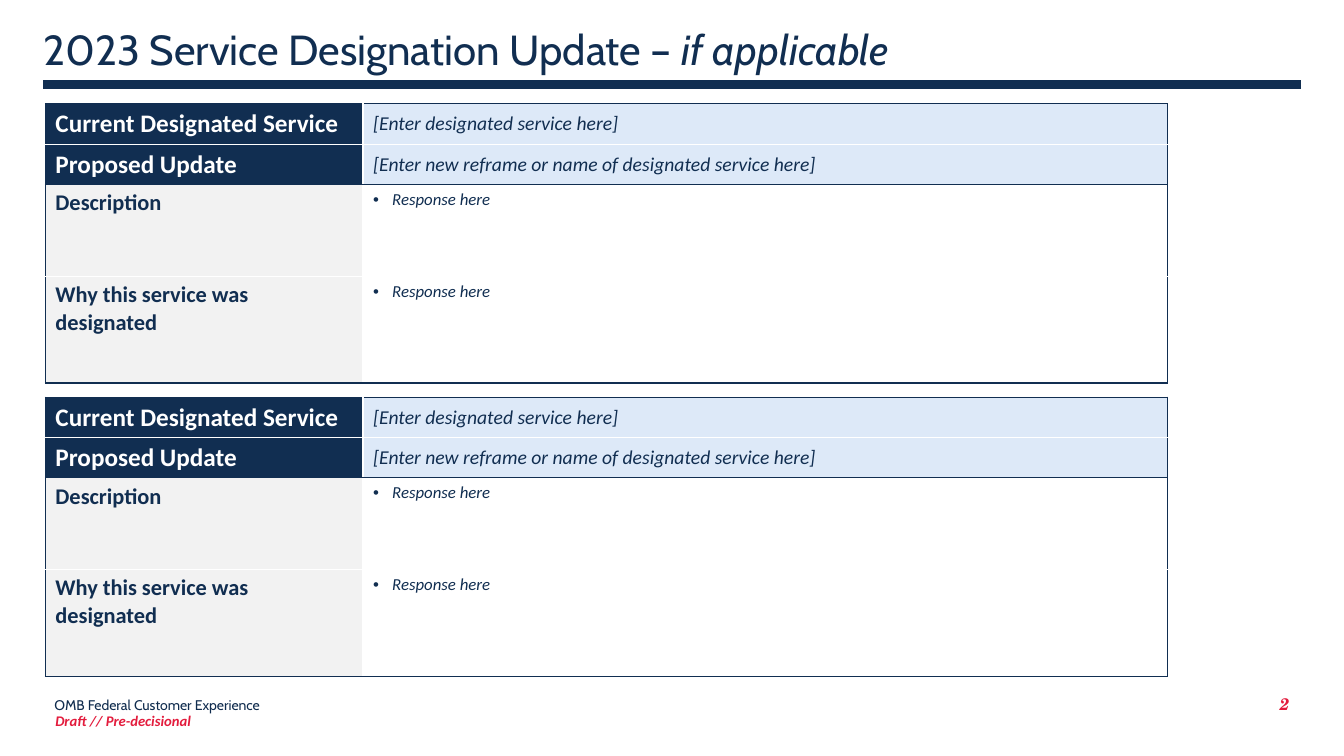
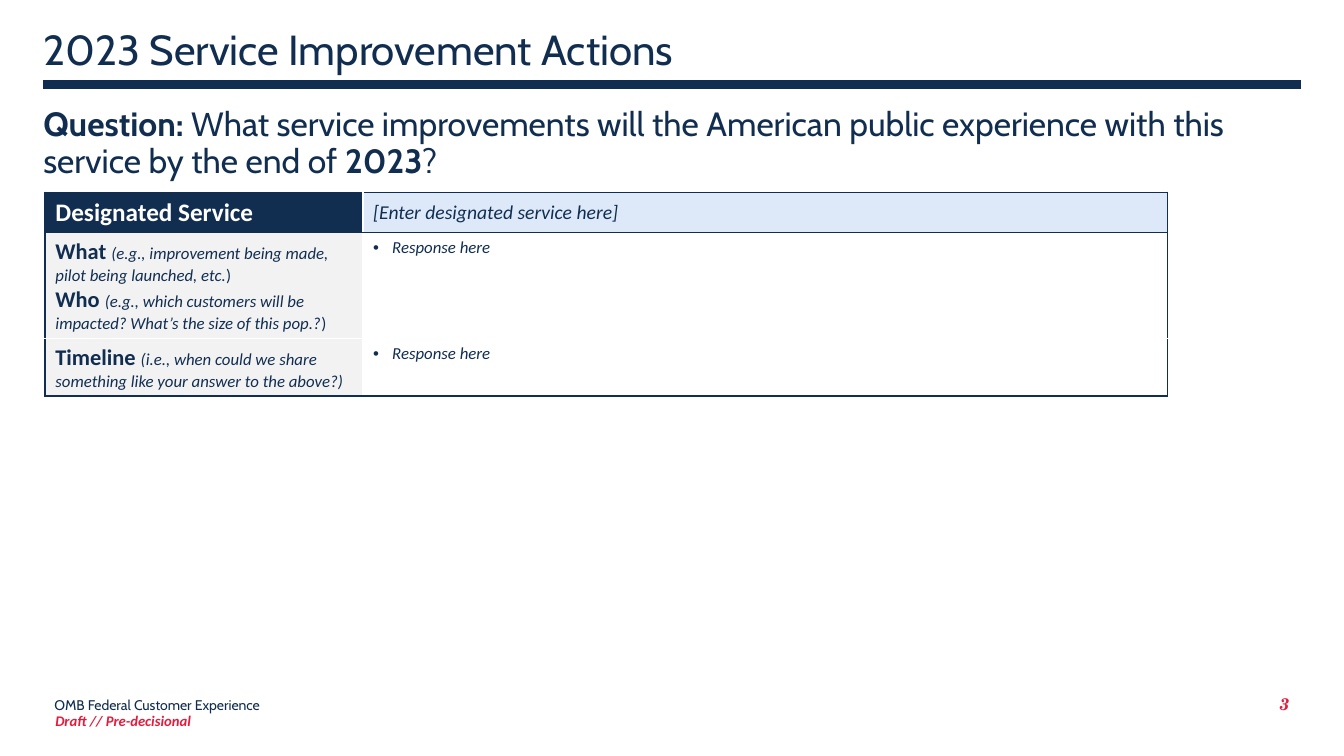
from dataclasses import dataclass
from typing import NamedTuple, Sequence

import pptx
import pptx.dml.color
import pptx.enum.shapes
import pptx.enum.text
import pptx.oxml.ns
import pptx.util
from lxml import etree

EMU_PER_PX = 9144  # 100 px to the inch

NAVY = "112E51"
FOOTER_NAVY = "102C4E"
RED = "E31C3D"
WHITE = "FFFFFF"
PALE_BLUE = "DDE9F8"
PALE_GREY = "F2F2F2"

TOP = pptx.enum.text.MSO_ANCHOR.TOP
MIDDLE = pptx.enum.text.MSO_ANCHOR.MIDDLE
BOTTOM = pptx.enum.text.MSO_ANCHOR.BOTTOM
LEFT = pptx.enum.text.PP_ALIGN.LEFT
RIGHT = pptx.enum.text.PP_ALIGN.RIGHT


class Box(NamedTuple):
    left: int
    top: int
    width: int
    height: int


class Insets(NamedTuple):
    left: int = 0
    top: int = 0
    right: int = 0
    bottom: int = 0


class Run(NamedTuple):
    """Text with only what differs from its paragraph's style."""
    text: str
    size: float | None = None
    bold: bool | None = None
    italic: bool | None = None


Paragraphs = Sequence[Sequence[Run]]


@dataclass(frozen=True)
class Style:
    font: str
    size: float
    color: str = NAVY
    bold: bool = False
    italic: bool = False
    align: pptx.enum.text.PP_ALIGN = LEFT
    line_spacing: float | None = None
    space_before: float | None = None
    bullet: bool = False


@dataclass(frozen=True)
class CellLook:
    style: Style
    fill: str
    anchor: pptx.enum.text.MSO_ANCHOR = TOP


@dataclass(frozen=True)
class Row:
    height: int
    label: Paragraphs
    answer: str
    header: bool = False


# Text styles
TITLE = Style("Cabin", 30, line_spacing=0.9, space_before=10)
QUESTION = Style("Cabin", 24, line_spacing=0.9, space_before=10)
AGENCY = Style("Cabin", 10, FOOTER_NAVY)
DRAFT = Style("Calibri", 10.5, RED, bold=True, italic=True)
PAGE_NUMBER = Style("TeX Gyre Schola", 12, RED, bold=True, italic=True, align=RIGHT)

# Table cells: a label and an answer, in header and body rows
HEADER_LABEL = CellLook(Style("Calibri", 18, WHITE, bold=True), NAVY)
HEADER_ANSWER = CellLook(Style("Calibri", 14, italic=True), PALE_BLUE, MIDDLE)
BODY_LABEL = CellLook(Style("Calibri", 16, bold=True), PALE_GREY)
BODY_ANSWER = CellLook(Style("Calibri", 12, italic=True, bullet=True), WHITE)

# Layout
MARGIN = 43
RULE_Y = 84
RULE_END = 1290
TABLE_LEFT = 45
COLUMN_WIDTHS = (315, 798)
BULLET_INDENT = 19
TITLE_HEIGHT = 110
NO_INSETS = Insets()


def px(length: int) -> pptx.util.Emu:
    return pptx.util.Emu(length * EMU_PER_PX)


def rgb(color: str) -> pptx.dml.color.RGBColor:
    return pptx.dml.color.RGBColor.from_string(color)


def add_xml(parent: etree._Element, tag: str, **attributes: str) -> etree._Element:
    return etree.SubElement(parent, pptx.oxml.ns.qn(tag), attributes)


# Text
def write_paragraphs(frame, paragraphs: Paragraphs, style: Style) -> None:
    for index, runs in enumerate(paragraphs):
        paragraph = frame.add_paragraph() if index else frame.paragraphs[0]
        if style.bullet:
            properties = paragraph._p.get_or_add_pPr()
            properties.set("marL", str(px(BULLET_INDENT)))
            properties.set("indent", str(px(-BULLET_INDENT)))
            add_xml(properties, "a:buFont", typeface="Arial")
            add_xml(properties, "a:buChar", char="•")
        paragraph.alignment = style.align
        if style.line_spacing is not None:
            paragraph.line_spacing = style.line_spacing
        if style.space_before is not None:
            paragraph.space_before = pptx.util.Pt(style.space_before)
        paragraph.font.name = style.font
        paragraph.font.size = pptx.util.Pt(style.size)
        paragraph.font.bold = style.bold
        paragraph.font.italic = style.italic
        paragraph.font.color.rgb = rgb(style.color)
        for part in runs:
            run = paragraph.add_run()
            run.text = part.text
            if part.size is not None:
                run.font.size = pptx.util.Pt(part.size)
            if part.bold is not None:
                run.font.bold = part.bold
            if part.italic is not None:
                run.font.italic = part.italic


def add_text(slide, box: Box, runs: Sequence[Run], style: Style,
             anchor=TOP, insets: Insets = NO_INSETS) -> None:
    frame = slide.shapes.add_textbox(*map(px, box)).text_frame
    frame.word_wrap = True
    frame.vertical_anchor = anchor
    frame.margin_left, frame.margin_top, frame.margin_right, frame.margin_bottom = map(px, insets)
    write_paragraphs(frame, [runs], style)


# Tables
def set_border(cell, side: str, color: str, points: float) -> None:
    line = add_xml(cell._tc.get_or_add_tcPr(), f"a:ln{side}", w=str(pptx.util.Pt(points)))
    add_xml(add_xml(line, "a:solidFill"), "a:srgbClr", val=color)


def add_service_table(slide, top: int, rows: Sequence[Row], frame_width: float) -> None:
    """Navy around the table and under its header rows, white between other cells."""
    box = Box(TABLE_LEFT, top, sum(COLUMN_WIDTHS), sum(row.height for row in rows))
    table = slide.shapes.add_table(len(rows), len(COLUMN_WIDTHS), *map(px, box)).table
    table.first_row = table.horz_banding = False
    for column, width in zip(table.columns, COLUMN_WIDTHS):
        column.width = px(width)

    outer, divider, inner = (NAVY, frame_width), (NAVY, 1), (WHITE, 1)
    edges = [outer]
    edges += [inner if above.header == below.header else divider
              for above, below in zip(rows, rows[1:])]
    edges.append(outer)

    for index, row in enumerate(rows):
        table.rows[index].height = px(row.height)
        looks = (HEADER_LABEL, HEADER_ANSWER) if row.header else (BODY_LABEL, BODY_ANSWER)
        contents = (row.label, [[Run(row.answer)]])
        sides = ((outer, inner), (inner, outer))
        for column, (look, content, (left, right)) in enumerate(zip(looks, contents, sides)):
            cell = table.cell(index, column)
            set_border(cell, "L", *left)
            set_border(cell, "R", *right)
            set_border(cell, "T", *edges[index])
            set_border(cell, "B", *edges[index + 1])
            cell.fill.solid()
            cell.fill.fore_color.rgb = rgb(look.fill)
            cell.vertical_anchor = look.anchor
            write_paragraphs(cell.text_frame, content, look.style)


# What every slide shares
def add_base_slide(presentation, number: int, title: Sequence[Run], title_width: int):
    slide = presentation.slides.add_slide(presentation.slide_layouts[6])
    add_text(slide, Box(54, 672, 356, 36), [Run("OMB Federal Customer Experience")],
             AGENCY, BOTTOM)
    add_text(slide, Box(45, 701, 218, 29), [Run("Draft // Pre-decisional")],
             DRAFT, insets=Insets(10, 5, 10, 5))
    rule = slide.shapes.add_connector(
        pptx.enum.shapes.MSO_CONNECTOR.STRAIGHT,
        px(MARGIN), px(RULE_Y), px(RULE_END), px(RULE_Y))
    rule.line.color.rgb = rgb(NAVY)
    rule.line.width = pptx.util.Pt(6)
    add_xml(rule._element.spPr, "a:effectLst")
    add_text(slide, Box(979, 685, 300, 23), [Run(str(number))], PAGE_NUMBER, BOTTOM)
    add_text(slide, Box(MARGIN, RULE_Y - TITLE_HEIGHT, title_width, TITLE_HEIGHT),
             title, TITLE, BOTTOM, Insets(bottom=10))
    return slide


# Slides
def add_designation_slide(presentation, number: int) -> None:
    title = [Run("2023 Service Designation Update – "), Run("if applicable", italic=True)]
    slide = add_base_slide(presentation, number, title, 1057)
    rows = [
        Row(40, [[Run("Current Designated Service")]],
            "[Enter designated service here]", header=True),
        Row(40, [[Run("Proposed Update")]],
            "[Enter new reframe or name of designated service here]", header=True),
        Row(91, [[Run("Description")]], "Response here"),
        Row(106, [[Run("Why this service was designated")]], "Response here"),
    ]
    for top in (103, 394):
        add_service_table(slide, top, rows, frame_width=1)


def hint(text: str) -> Run:
    return Run(text, size=12, bold=False, italic=True)


def add_actions_slide(presentation, number: int) -> None:
    slide = add_base_slide(presentation, number, [Run("2023 Service Improvement Actions")], 704)
    question = [
        Run("Question:", bold=True),
        Run(" What service improvements will the American public experience"
            " with this service by the end of "),
        Run("2023", bold=True),
        Run("?"),
    ]
    add_text(slide, Box(MARGIN, 107, RULE_END - MARGIN, 80), question, QUESTION)
    closing = Run(")", size=12, bold=False)
    what_and_who = [
        [Run("What "), hint("(e.g., improvement being made, pilot being launched, etc."), closing],
        [Run("Who "),
         hint("(e.g., which customers will be impacted? What’s the size of this pop.?"), closing],
    ]
    timeline = [[
        Run("Timeline "),
        hint("(i.e., when could we share something like your answer to the above?)"),
    ]]
    rows = [
        Row(40, [[Run("Designated Service")]], "[Enter designated service here]", header=True),
        Row(105, what_and_who, "Response here"),
        Row(57, timeline, "Response here"),
    ]
    add_service_table(slide, 191, rows, frame_width=1.5)


def main() -> None:
    presentation = pptx.Presentation()
    presentation.slide_width = px(1333)
    presentation.slide_height = px(750)
    for number, add_slide in enumerate((add_designation_slide, add_actions_slide), start=2):
        add_slide(presentation, number)
    presentation.save("out.pptx")


if __name__ == "__main__":
    main()
